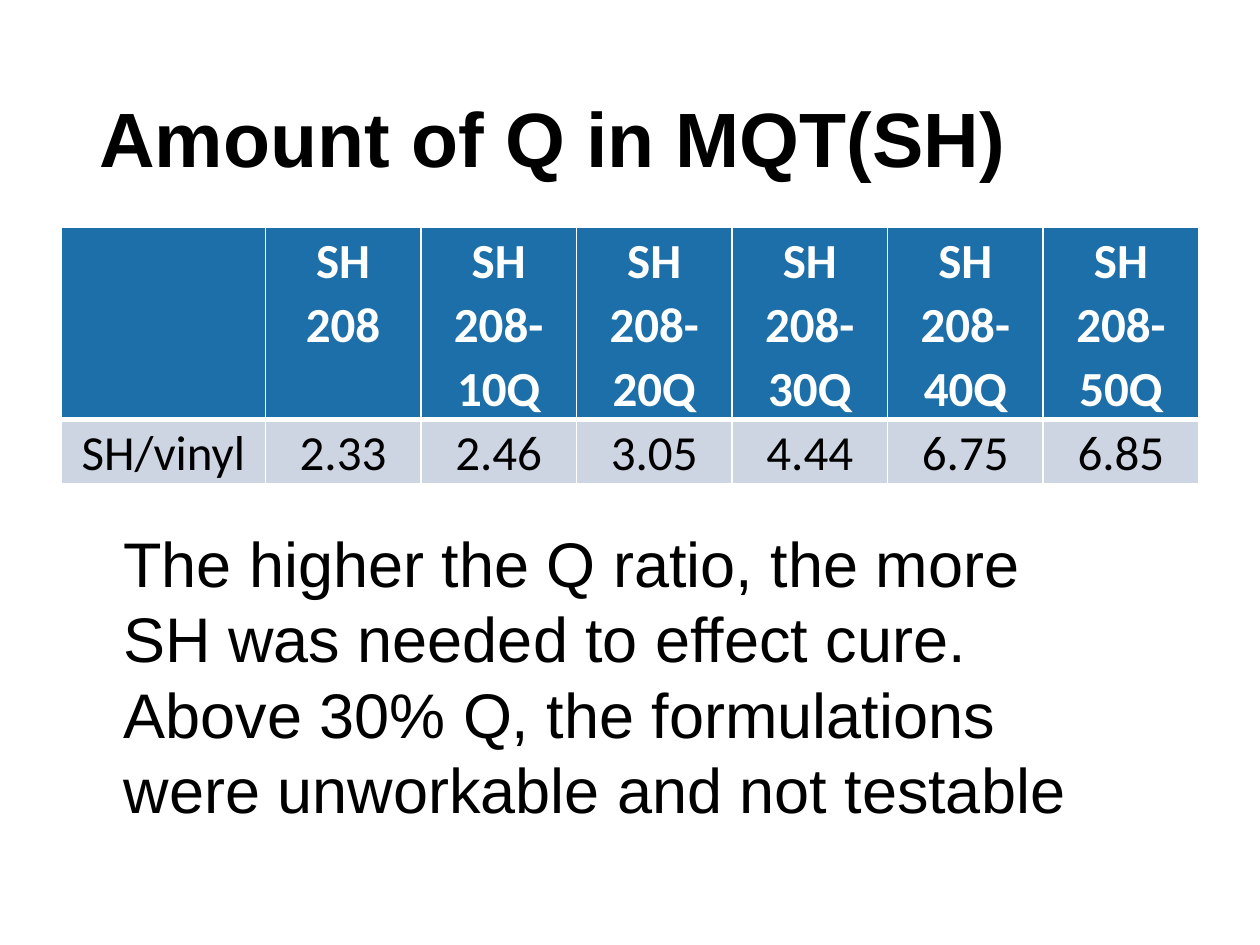
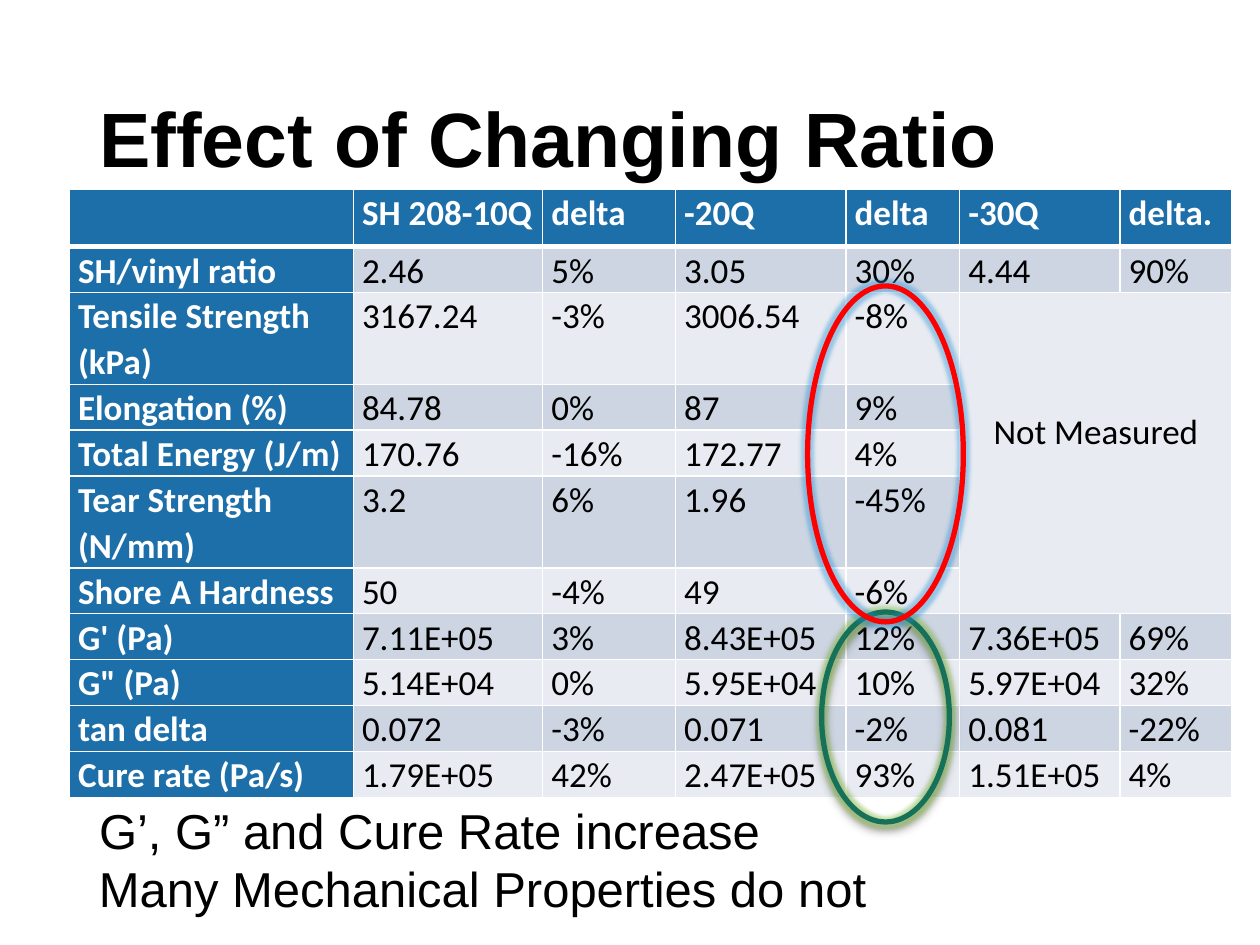
from dataclasses import dataclass

import pptx
import pptx.dml.color
import pptx.enum.shapes
import pptx.enum.text
import pptx.oxml
import pptx.oxml.ns
import pptx.util

Pt = pptx.util.Pt
ALIGN = pptx.enum.text.PP_ALIGN
ANCHOR = pptx.enum.text.MSO_ANCHOR
AUTO_SIZE = pptx.enum.text.MSO_AUTO_SIZE

BLACK = "000000"
WHITE = "FFFFFF"
HEADER_BLUE = "1D6FA9"
BANDS = ("CDD5E2", "E8EBF1")
HEADING_FONT = "Arial"
TABLE_FONT = "Calibri"

RATIO_ROWS = [
    ["", "SH 208"] + [f"SH 208-{percent}Q" for percent in range(10, 60, 10)],
    ["SH/vinyl", "2.33", "2.46", "3.05", "4.44", "6.75", "6.85"],
]
PROPERTY_ROWS = [
    ["", "SH 208-10Q", "delta", "-20Q", "delta", "-30Q", "delta."],
    ["SH/vinyl ratio", "2.46", "5%", "3.05", "30%", "4.44", "90%"],
    ["Tensile Strength (kPa)", "3167.24", "-3%", "3006.54", "-8%", "Not Measured", ""],
    ["Elongation (%)", "84.78", "0%", "87", "9%", "", ""],
    ["Total Energy (J/m)", "170.76", "-16%", "172.77", "4%", "", ""],
    ["Tear Strength (N/mm)", "3.2", "6%", "1.96", "-45%", "", ""],
    ["Shore A Hardness", "50", "-4%", "49", "-6%", "", ""],
    ["G' (Pa)", "7.11E+05", "3%", "8.43E+05", "12%", "7.36E+05", "69%"],
    ['G" (Pa)', "5.14E+04", "0%", "5.95E+04", "10%", "5.97E+04", "32%"],
    ["tan delta", "0.072", "-3%", "0.071", "-2%", "0.081", "-22%"],
    ["Cure rate (Pa/s)", "1.79E+05", "42%", "2.47E+05", "93%", "1.51E+05", "4%"],
]


@dataclass(frozen=True)
class Box:
    left: float
    top: float
    width: float
    height: float

    def lengths(self) -> list[pptx.util.Length]:
        return [Pt(value) for value in (self.left, self.top, self.width, self.height)]


@dataclass(frozen=True)
class TableStyle:
    font_size: float
    alignment: ALIGN
    column_widths: list[float]
    row_heights: list[float]
    header_column: bool


@dataclass(frozen=True)
class Ring:
    box: Box
    line_color: str
    glow_color: str
    has_shadow: bool


@dataclass(frozen=True)
class Note:
    box: Box
    lines: list[str]
    font_size: float
    wrap: bool


TITLE_BOX = Box(49.5, 29, 621, 104.5)
RATIO_STYLE = TableStyle(28, ALIGN.CENTER, [116.6] + [88.9] * 6, [29.5] * 2, False)
PROPERTY_STYLE = TableStyle(
    20, ALIGN.LEFT, [162.3, 108.2, 75.9, 97.4, 65, 91.6, 64.2], [33] + [14.4] * 10, True
)
RATIO_NOTE = Note(
    Box(63.5, 296, 580, 181.5),
    [
        "The higher the Q ratio, the more SH was needed to effect cure.",
        "Above 30% Q, the formulations were unworkable and not testable",
    ],
    36,
    True,
)
FINDINGS = [
    (
        Ring(Box(469.5, 349.7, 73, 120), "157259", "8CC63F", True),
        Note(Box(49.5, 454, 397, 41), ["G’, G” and Cure Rate increase"], 28, False),
    ),
    (
        Ring(Box(461.5, 163.4, 89, 192), "FF0000", "1C8ED6", False),
        Note(Box(49.5, 487, 458.6, 41), ["Many Mechanical Properties do not"], 28, False),
    ),
]


def rgb(color: str) -> pptx.dml.color.RGBColor:
    return pptx.dml.color.RGBColor.from_string(color)


def format_font(paragraph, name: str, size: float, color: str, bold: bool = False) -> None:
    paragraph.font.name = name
    paragraph.font.size = Pt(size)
    paragraph.font.bold = bold
    paragraph.font.color.rgb = rgb(color)


def add_titled_slide(presentation, title: str):
    slide = presentation.slides.add_slide(presentation.slide_layouts.get_by_name("Title Only"))
    shape = slide.shapes.title
    shape.left, shape.top, shape.width, shape.height = TITLE_BOX.lengths()
    frame = shape.text_frame
    frame.text = title
    frame.auto_size = AUTO_SIZE.NONE
    frame.vertical_anchor = ANCHOR.MIDDLE
    paragraph = frame.paragraphs[0]
    paragraph.alignment = ALIGN.LEFT
    paragraph.line_spacing = 0.9
    format_font(paragraph, HEADING_FONT, 44, BLACK, True)
    return slide


def add_note(slide, note: Note) -> None:
    frame = slide.shapes.add_textbox(*note.box.lengths()).text_frame
    frame.word_wrap = note.wrap
    frame.auto_size = AUTO_SIZE.SHAPE_TO_FIT_TEXT
    frame.text = "\n".join(note.lines)
    for paragraph in frame.paragraphs:
        format_font(paragraph, HEADING_FONT, note.font_size, BLACK)


def set_borders(cell, top: float, bottom: float) -> None:
    properties = cell._tc.get_or_add_tcPr()
    for side, width in (("L", 1), ("R", 1), ("T", top), ("B", bottom)):
        properties.append(pptx.oxml.parse_xml(
            f'<a:ln{side} {pptx.oxml.ns.nsdecls("a")} w="{Pt(width)}"><a:solidFill>'
            f'<a:srgbClr val="{WHITE}"/></a:solidFill></a:ln{side}>'
        ))


def add_data_table(slide, box: Box, rows: list[list[str]], style: TableStyle):
    frame = slide.shapes.add_table(len(rows), len(rows[0]), *box.lengths())
    table = frame.table
    for column, width in zip(table.columns, style.column_widths):
        column.width = Pt(width)
    for row, height in zip(table.rows, style.row_heights):
        row.height = Pt(height)
    frame.height = Pt(box.height)
    for row_index, row in enumerate(rows):
        for column_index, text in enumerate(row):
            cell = table.cell(row_index, column_index)
            header = row_index == 0 or (style.header_column and column_index == 0)
            set_borders(cell, 3 if row_index == 1 else 1, 3 if row_index == 0 else 1)
            cell.fill.solid()
            cell.fill.fore_color.rgb = rgb(HEADER_BLUE if header else BANDS[(row_index - 1) % 2])
            cell.margin_left = cell.margin_right = Pt(5)
            cell.margin_top = cell.margin_bottom = Pt(0)
            if text:
                cell.text = text
                paragraph = cell.text_frame.paragraphs[0]
                paragraph.alignment = style.alignment
                paragraph.line_spacing = 1.07
                color = WHITE if header else BLACK
                format_font(paragraph, TABLE_FONT, style.font_size, color, header)
    return table


def add_ring(slide, ring: Ring) -> None:
    shape = slide.shapes.add_shape(pptx.enum.shapes.MSO_SHAPE.OVAL, *ring.box.lengths())
    shape.fill.background()
    shape.line.color.rgb = rgb(ring.line_color)
    shape.line.width = Pt(3)
    shape.shadow.inherit = False
    shadow = (
        f'<a:outerShdw blurRad="{Pt(4)}" dist="{Pt(3)}" dir="5400000" rotWithShape="0">'
        f'<a:srgbClr val="{BLACK}"><a:alpha val="40000"/></a:srgbClr></a:outerShdw>'
    )
    effects = pptx.oxml.parse_xml(
        f'<a:effectLst {pptx.oxml.ns.nsdecls("a")}><a:glow rad="{Pt(4)}">'
        f'<a:srgbClr val="{ring.glow_color}"><a:alpha val="40000"/></a:srgbClr></a:glow>'
        f'{shadow if ring.has_shadow else ""}</a:effectLst>'
    )
    properties = shape._element.spPr
    properties.replace(properties.find(pptx.oxml.ns.qn("a:effectLst")), effects)


def build_ratio_slide(presentation) -> None:
    slide = add_titled_slide(presentation, "Amount of Q in MQT(SH)")
    add_data_table(slide, Box(35, 130, 650, 140.4), RATIO_ROWS, RATIO_STYLE)
    add_note(slide, RATIO_NOTE)


def build_property_slide(presentation) -> None:
    slide = add_titled_slide(presentation, "Effect of Changing Ratio")
    table = add_data_table(slide, Box(39.6, 108, 664.6, 328.3), PROPERTY_ROWS, PROPERTY_STYLE)
    unmeasured = table.cell(2, 5)
    unmeasured.merge(table.cell(6, 6))
    unmeasured.vertical_anchor = ANCHOR.MIDDLE
    unmeasured.margin_bottom = Pt(25)
    unmeasured.text_frame.paragraphs[0].alignment = ALIGN.CENTER
    for ring, note in FINDINGS:
        add_ring(slide, ring)
        add_note(slide, note)


def main() -> None:
    """Build the two slides on the thiol ratio and save them."""
    presentation = pptx.Presentation()
    presentation.slide_width, presentation.slide_height = Pt(720), Pt(540)
    build_ratio_slide(presentation)
    build_property_slide(presentation)
    presentation.save("out.pptx")


if __name__ == "__main__":
    main()
